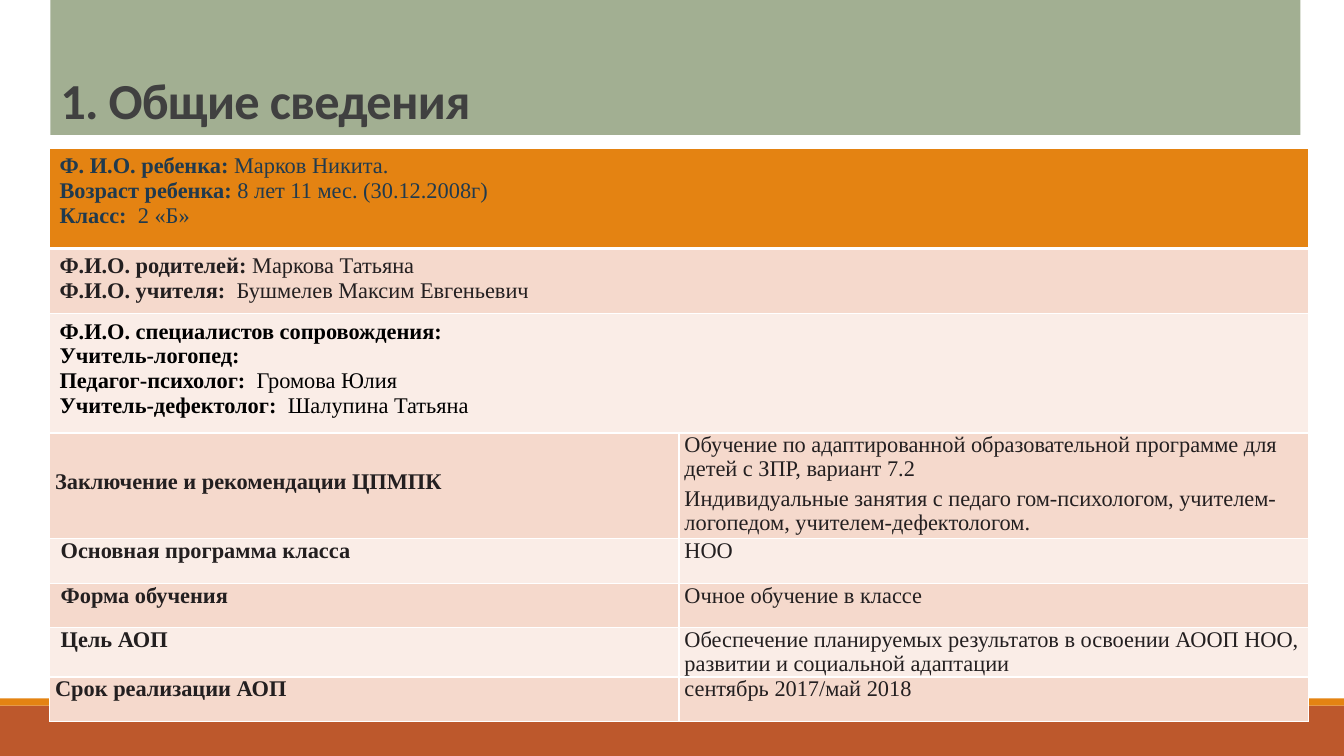
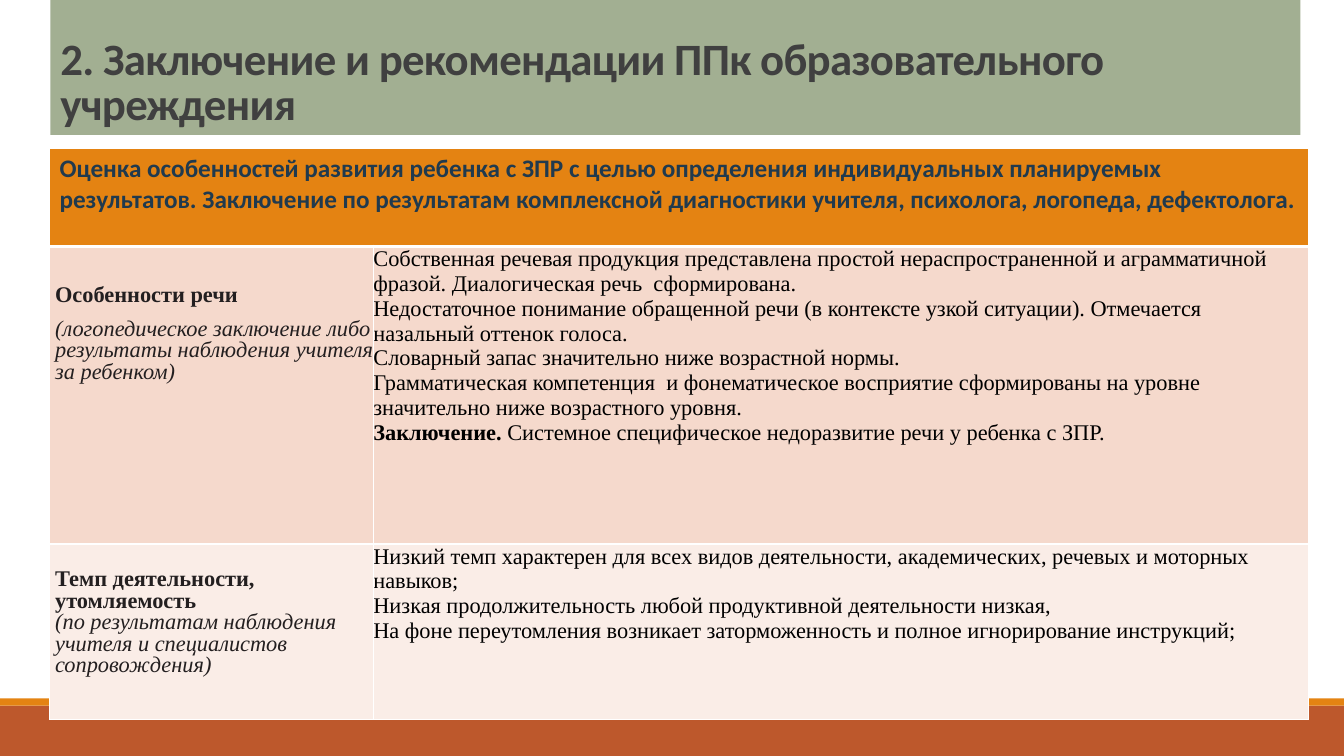
from dataclasses import dataclass

from lxml import etree
from pptx import Presentation
from pptx.dml.color import RGBColor
from pptx.enum.shapes import MSO_SHAPE
from pptx.enum.text import MSO_ANCHOR, PP_ALIGN
from pptx.oxml.ns import qn
from pptx.util import Cm, Pt

SERIF = "Times New Roman"
SANS = "Calibri"
ORANGE = "E48312"
RUST = "BD582C"
SAGE = "A2AF92"
WHITE = "FFFFFF"
BLACK = "000000"
INK = "231F20"
NAVY = "203A4E"
TITLE_GREY = "404040"
ROW_FILLS = ("F5D9CC", "FAEDE7")


def color(value):
    return RGBColor.from_string(value)


def bold(text):
    return text, {"bold": True}


def italic(text):
    return text, {"italic": True}


def plain(text):
    return text, {"bold": False}


def field(label, value):
    return [bold(label), plain(value)]


@dataclass
class Cell:
    paragraphs: list
    left: float = 0.25
    top: float = 0.13
    right: float = 0.25
    ink: str = INK
    font: str = SERIF
    size: int = 16
    spacing: float = 1
    before: float = 0


def inset(paragraphs, left=0.14, top=0, **style):
    return Cell(paragraphs, left, top, 0, **style)


class Deck:
    width, height = 33.87, 19.05
    title_box = (1.27, 0, 31.5, 3.4)
    table_left, table_top = 1.25, 3.75

    def __init__(self):
        self.presentation = Presentation()
        self.presentation.slide_width = Cm(self.width)
        self.presentation.slide_height = Cm(self.height)
        self.slide = None

    def new_slide(self, title, size):
        self.slide = self.presentation.slides.add_slide(self.presentation.slide_layouts[6])
        self.band(0, 17.78, self.width, 1.27, RUST)
        self.band(0, 17.6, self.width, 0.18, ORANGE)
        self.title(title, size)

    def band(self, left, top, width, height, fill):
        shape = self.slide.shapes.add_shape(
            MSO_SHAPE.RECTANGLE, Cm(left), Cm(top), Cm(width), Cm(height))
        shape.shadow.inherit = False
        shape.fill.solid()
        shape.fill.fore_color.rgb = color(fill)
        shape.line.fill.background()
        return shape

    def title(self, text, size):
        shape = self.band(*self.title_box, SAGE)
        shape.text_frame.word_wrap = True
        shape.text_frame.vertical_anchor = MSO_ANCHOR.BOTTOM
        paragraph = shape.text_frame.paragraphs[0]
        self.add_runs(paragraph, [bold(text)], SANS, size, TITLE_GREY, 0.85)
        for properties in shape.element.iter(qn("a:rPr")):
            properties.set("spc", "-50")

    def add_runs(self, paragraph, runs, font, size, ink, spacing):
        paragraph.alignment = PP_ALIGN.LEFT
        paragraph.line_spacing = spacing
        for text, emphasis in runs:
            run = paragraph.add_run()
            run.text = text
            style = {"name": font, "size": Pt(size), **emphasis}
            for name, value in style.items():
                setattr(run.font, name, value)
            run.font.color.rgb = color(ink)

    def table(self, widths, heights, rows):
        frame = self.slide.shapes.add_table(
            len(heights), len(widths), Cm(self.table_left), Cm(self.table_top),
            Cm(sum(widths)), Cm(sum(heights)))
        table = frame.table
        table.first_row = table.horz_banding = False
        for column, width in zip(table.columns, widths):
            column.width = Cm(width)
        for index, (height, cells) in enumerate(zip(heights, rows)):
            table.rows[index].height = Cm(height)
            fill = ROW_FILLS[(index - 1) % 2] if index else ORANGE
            for position in range(len(widths)):
                target = table.cell(index, position)
                self.borders(target, 3 if index == 1 else 1, 1 if index else 3)
                target.fill.solid()
                target.fill.fore_color.rgb = color(fill)
            if len(cells) < len(widths):
                table.cell(index, 0).merge(table.cell(index, len(widths) - 1))
            for position, cell in enumerate(cells):
                self.fill_cell(table.cell(index, position), cell)

    def borders(self, target, top, bottom):
        properties = target._tc.get_or_add_tcPr()
        for side, weight in {"L": 1, "R": 1, "T": top, "B": bottom}.items():
            line = etree.SubElement(properties, qn(f"a:ln{side}"), w=str(Pt(weight)))
            solid = etree.SubElement(line, qn("a:solidFill"))
            etree.SubElement(solid, qn("a:srgbClr"), val=WHITE)

    def fill_cell(self, target, cell):
        margins = {"left": cell.left, "top": cell.top, "right": cell.right, "bottom": 0}
        for side, margin in margins.items():
            setattr(target, f"margin_{side}", Cm(margin))
        frame = target.text_frame
        for number, runs in enumerate(cell.paragraphs):
            paragraph = frame.add_paragraph() if number else frame.paragraphs[0]
            if number:
                paragraph.space_before = Pt(cell.before)
            self.add_runs(paragraph, runs, cell.font, cell.size, cell.ink, cell.spacing)


def general_information(deck):
    deck.new_slide("1. Общие сведения", 36)
    rows = [
        [Cell([
            field("Ф. И.О. ребенка: ", "Марков Никита."),
            field("Возраст ребенка: ", "8 лет 11 мес. (30.12.2008г)"),
            field("Класс:  ", "2 «Б»"),
        ], ink=NAVY)],
        [Cell([
            field("Ф.И.О. родителей: ", "Маркова Татьяна"),
            field("Ф.И.О. учителя:  ", "Бушмелев Максим Евгеньевич"),
        ])],
        [Cell([
            [bold("Ф.И.О. специалистов сопровождения:")],
            [bold("Учитель-логопед:")],
            field("Педагог-психолог:  ", "Громова Юлия"),
            field("Учитель-дефектолог:  ", "Шалупина Татьяна"),
        ], ink=BLACK)],
        [inset([[bold("Заключение и рекомендации ЦПМПК")]], top=0.94, spacing=0.97),
         inset([
             [plain("Обучение по адаптированной образовательной программе для "
                    "детей с ЗПР, вариант 7.2")],
             [plain("Индивидуальные занятия с педаго гом-психологом, "
                    "учителем-логопедом, учителем-дефектологом.")],
         ], spacing=0.97, before=4.2)],
    ]
    programme = [
        ("Основная программа класса", "НОО", 0.28, 1),
        ("Форма обучения", "Очное обучение в классе", 0.28, 1),
        ("Цель АОП", "Обеспечение планируемых результатов в освоении АООП НОО, "
                     "развитии и социальной адаптации", 0.28, 0.97),
        ("Срок реализации АОП", "сентябрь 2017/май 2018", 0.14, 1),
    ]
    for label, value, left, spacing in programme:
        rows.append([inset([[bold(label)]], left),
                     inset([[plain(value)]], spacing=spacing)])
    deck.table([15.86] * 2, [2.51, 1.65, 3, 2.67, 1.12, 1.12, 1.24, 1.12], rows)


def council_conclusion(deck):
    deck.new_slide("2. Заключение и рекомендации ППк образовательного учреждения", 32)
    heading = Cell([[bold(
        "Оценка особенностей развития ребенка с ЗПР с целью определения индивидуальных "
        "планируемых результатов. Заключение по результатам комплексной диагностики "
        "учителя, психолога, логопеда, дефектолога.")]], ink=NAVY, font=SANS, size=18)
    speech_label = inset([
        [bold("Особенности речи")],
        [italic("(логопедическое заключение либо результаты наблюдения учителя за ребенком)")],
    ], top=0.97, spacing=0.86, before=9.2)
    speech = inset([
        [plain("Собственная речевая продукция представлена простой нераспространенной и "
               "аграмматичной фразой. Диалогическая речь  сформирована.")],
        [plain("Недостаточное понимание обращенной речи (в контексте узкой ситуации). "
               "Отмечается назальный оттенок голоса.")],
        [plain("Словарный запас значительно ниже возрастной нормы.")],
        [plain("Грамматическая компетенция  и фонематическое восприятие сформированы на "
               "уровне значительно ниже возрастного уровня.")],
        field("Заключение. ", "Системное специфическое недоразвитие речи у ребенка с ЗПР."),
    ], left=0, ink=BLACK)
    pace_label = inset([
        [bold("Темп деятельности, утомляемость")],
        [italic("(по результатам наблюдения учителя и специалистов сопровождения)")],
    ], top=0.65, spacing=0.86)
    pace = inset([
        [plain("Низкий темп характерен для всех видов деятельности, академических, "
               "речевых и моторных навыков;")],
        [plain("Низкая продолжительность любой продуктивной деятельности низкая,")],
        [plain("На фоне переутомления возникает заторможенность и полное игнорирование "
               "инструкций;")],
    ], left=0, ink=BLACK)
    deck.table([8.16, 23.56], [2.46, 7.5, 4.42],
               [[heading], [speech_label, speech], [pace_label, pace]])


def main():
    deck = Deck()
    general_information(deck)
    council_conclusion(deck)
    deck.presentation.save("out.pptx")


if __name__ == "__main__":
    main()
